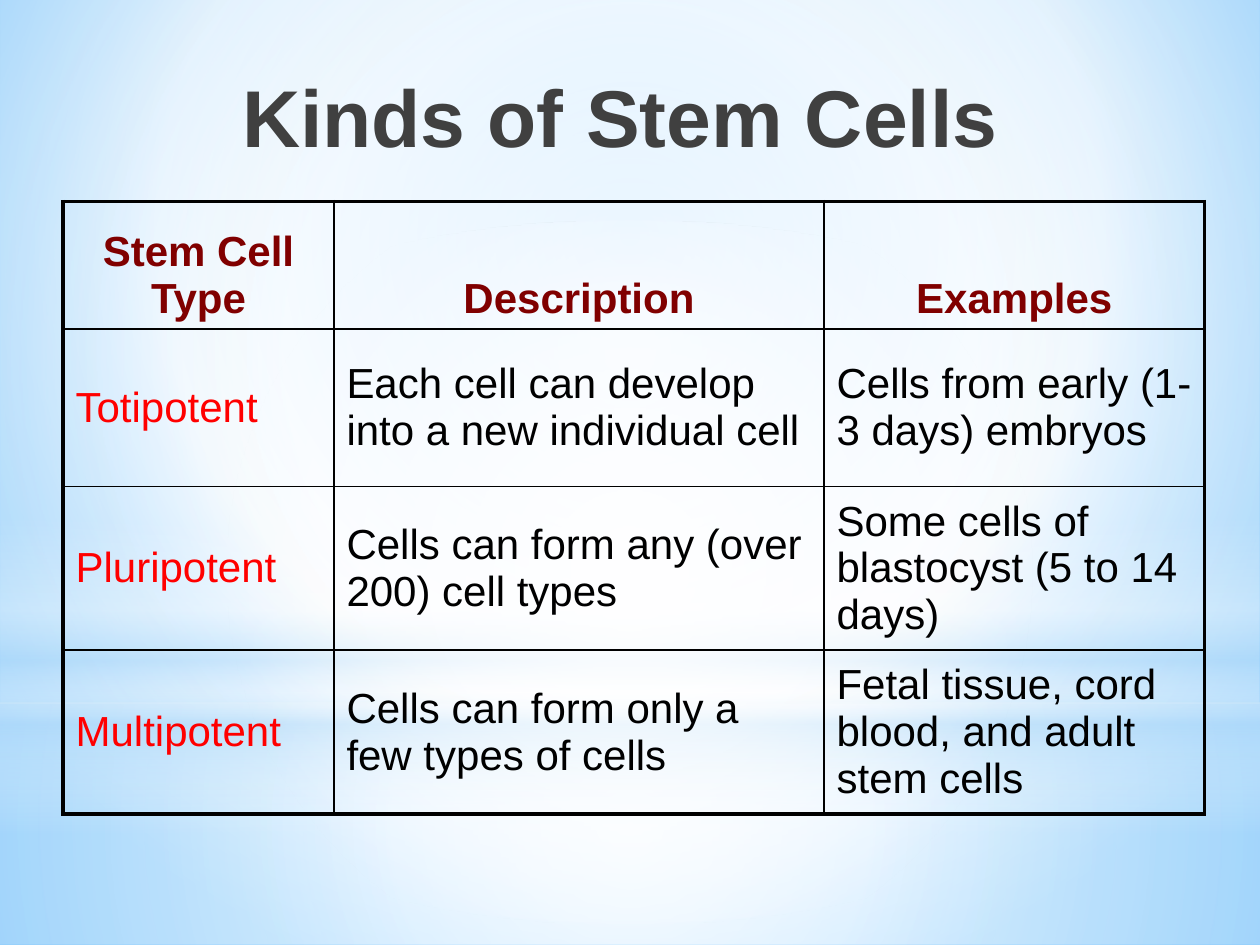
"""Build the slide that compares three kinds of stem cells."""
from dataclasses import dataclass

from pptx import Presentation
from pptx.dml.color import RGBColor
from pptx.enum.shapes import MSO_SHAPE
from pptx.enum.text import MSO_ANCHOR, PP_ALIGN
from pptx.oxml import parse_xml
from pptx.oxml.ns import nsdecls, qn
from pptx.util import Inches, Pt

RECTANGLE, OVAL = MSO_SHAPE.RECTANGLE, MSO_SHAPE.OVAL
TOP, MIDDLE, BOTTOM = MSO_ANCHOR.TOP, MSO_ANCHOR.MIDDLE, MSO_ANCHOR.BOTTOM
LEFT, CENTER = PP_ALIGN.LEFT, PP_ALIGN.CENTER

WHITE = RGBColor(0xFF, 0xFF, 0xFF)
BLACK = RGBColor(0x00, 0x00, 0x00)
CHARCOAL = RGBColor(0x40, 0x40, 0x40)
MAROON = RGBColor(0x80, 0x00, 0x00)
RED = RGBColor(0xFF, 0x00, 0x00)
PALE_BLUE = RGBColor(0xB4, 0xDC, 0xFA)
SKY_BLUE = RGBColor(0x9E, 0xD5, 0xFF)
DEEP_BLUE = RGBColor(0x5B, 0xB9, 0xFF)

FONT = "Arial"
OUTER_LINE, INNER_LINE = 2.25, 1
COLUMN_WIDTHS = (2.15, 3.89, 3.02)
ROW_HEIGHTS = (1.01, 1.25, 1.25, 1.25)
CELL_TYPES = (
    ("Stem Cell Type", "Description", "Examples"),
    ("Totipotent", "Each cell can develop into a new individual cell",
     "Cells from early (1-3 days) embryos"),
    ("Pluripotent", "Cells can form any (over 200) cell types",
     "Some cells of blastocyst (5 to 14 days)"),
    ("Multipotent", "Cells can form only a few types of cells",
     "Fetal tissue, cord blood, and adult stem cells"),
)


@dataclass(frozen=True)
class Stop:
    position: int
    color: RGBColor
    opacity: int = 100


@dataclass(frozen=True)
class Gradient:
    stops: tuple[Stop, ...]
    focus: tuple[int, int, int, int] | None = (50, 50, 50, 50)


@dataclass(frozen=True)
class Glow:
    top: float
    height: float
    outline: MSO_SHAPE
    gradient: Gradient


BACKDROP = Gradient(
    (Stop(0, SKY_BLUE), Stop(60, WHITE), Stop(100, DEEP_BLUE)), (20, 10, 20, 60))
GLOWS = (
    Glow(5.58, 1.92, RECTANGLE, Gradient(
        (Stop(0, WHITE, 91), Stop(37, WHITE, 76), Stop(100, PALE_BLUE, 79)))),
    Glow(0, 5.58, RECTANGLE, Gradient(
        (Stop(0, WHITE, 89), Stop(48, WHITE, 62), Stop(100, PALE_BLUE, 79)))),
    Glow(4.12, 2.5, RECTANGLE, Gradient(
        (Stop(0, WHITE, 0), Stop(29, WHITE, 30), Stop(45, PALE_BLUE, 40),
         Stop(55, WHITE, 26), Stop(65, PALE_BLUE, 60), Stop(100, WHITE, 0)), None)),
    Glow(1.75, 5.58, OVAL, Gradient((Stop(0, WHITE), Stop(56, WHITE, 0)))),
)


def apply_gradient(fill, properties, gradient: Gradient) -> None:
    """Give the owner of properties a circular or a vertical gradient."""
    stops = "".join(
        f'<a:gs pos="{stop.position * 1000}"><a:srgbClr val="{stop.color}">'
        f'<a:alpha val="{stop.opacity * 1000}"/></a:srgbClr></a:gs>'
        for stop in gradient.stops)
    if gradient.focus:
        sides = " ".join(
            f'{side}="{share * 1000}"' for side, share in zip("ltrb", gradient.focus))
        direction = f'<a:path path="circle"><a:fillToRect {sides}/></a:path>'
    else:
        direction = '<a:lin ang="5400000" scaled="0"/>'
    fill.solid()
    properties.replace(properties.find(qn("a:solidFill")), parse_xml(
        f'<a:gradFill {nsdecls("a")} rotWithShape="1">'
        f'<a:gsLst>{stops}</a:gsLst>{direction}</a:gradFill>'))


def add_glow(slide, glow: Glow) -> None:
    """Draw one full-width translucent layer."""
    layer = slide.shapes.add_shape(
        glow.outline, Inches(0), Inches(glow.top), Inches(10), Inches(glow.height))
    layer.shadow.inherit = False
    layer.line.fill.background()
    apply_gradient(layer.fill, layer.element.spPr, glow.gradient)


def write(frame, text: str, size: float, color: RGBColor, bold: bool, align: PP_ALIGN) -> None:
    """Set one formatted paragraph in a text frame."""
    frame.text = text
    frame.word_wrap = True
    paragraph = frame.paragraphs[0]
    paragraph.alignment = align
    font = paragraph.runs[0].font
    font.name, font.size, font.bold = FONT, Pt(size), bold
    font.color.rgb = color


def add_title(slide, text: str) -> None:
    """Write the slide heading."""
    heading = slide.shapes.add_textbox(Inches(0.67), Inches(0.42), Inches(8.5), Inches(0.67))
    heading.text_frame.margin_top = Inches(0.11)
    heading.text_frame.vertical_anchor = TOP
    write(heading.text_frame, text, 46, CHARCOAL, True, CENTER)


def set_borders(cell, row: int, column: int) -> None:
    """Rule a cell, heavier along the rim of the table."""
    on_rim = {"L": column == 0, "R": column == len(COLUMN_WIDTHS) - 1,
              "T": row == 0, "B": row == len(ROW_HEIGHTS) - 1}
    properties = cell._tc.get_or_add_tcPr()
    for index, (side, outer) in enumerate(on_rim.items()):
        width = Pt(OUTER_LINE if outer else INNER_LINE)
        properties.insert(index, parse_xml(
            f'<a:ln{side} {nsdecls("a")} w="{width}"><a:solidFill>'
            f'<a:srgbClr val="{BLACK}"/></a:solidFill></a:ln{side}>'))


def add_cell_table(slide) -> None:
    """Tabulate the stem cell types."""
    table = slide.shapes.add_table(
        len(ROW_HEIGHTS), len(COLUMN_WIDTHS), Inches(0.5), Inches(1.6),
        Inches(sum(COLUMN_WIDTHS)), Inches(sum(ROW_HEIGHTS))).table
    table.first_row = table.horz_banding = False
    for column, width in zip(table.columns, COLUMN_WIDTHS):
        column.width = Inches(width)
    for row, height in zip(table.rows, ROW_HEIGHTS):
        row.height = Inches(height)
    for row, entries in enumerate(CELL_TYPES):
        header = row == 0
        for column, entry in enumerate(entries):
            cell = table.cell(row, column)
            color = MAROON if header else RED if column == 0 else BLACK
            write(cell.text_frame, entry, 24, color, header, CENTER if header else LEFT)
            cell.vertical_anchor = BOTTOM if header else MIDDLE
            cell.fill.background()
            set_borders(cell, row, column)


def main() -> None:
    """Assemble and save the slide."""
    deck = Presentation()
    deck.slide_width, deck.slide_height = Inches(10), Inches(7.5)
    slide = deck.slides.add_slide(deck.slide_layouts[6])
    backdrop_fill = slide.background.fill
    backdrop_fill.solid()
    apply_gradient(backdrop_fill, slide.element.find(".//" + qn("p:bgPr")), BACKDROP)
    for glow in GLOWS:
        add_glow(slide, glow)
    add_title(slide, "Kinds of Stem Cells")
    add_cell_table(slide)
    deck.save("out.pptx")


if __name__ == "__main__":
    main()
